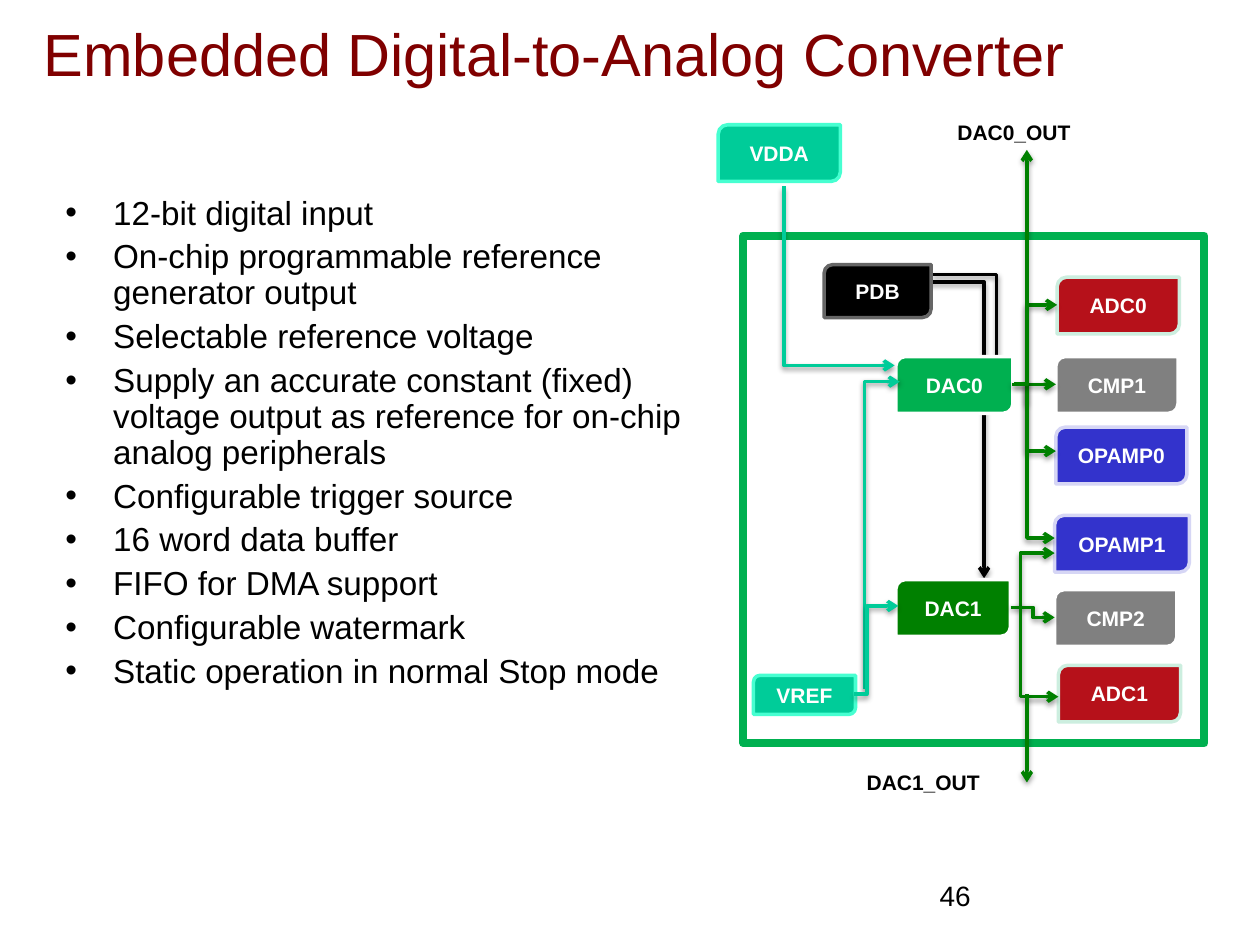
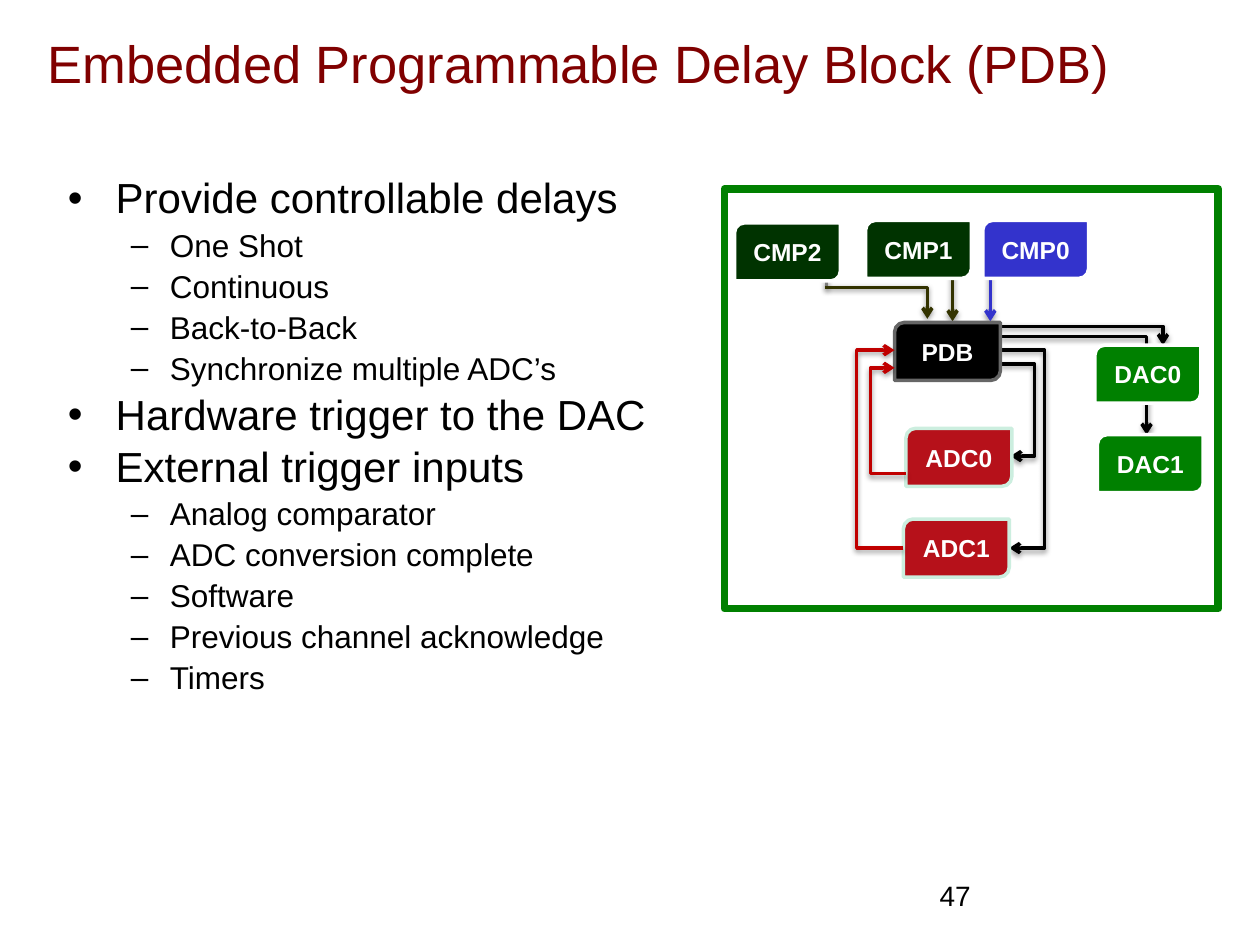
from lxml import etree
from pptx import Presentation
from pptx import util as u
from pptx.dml import color
from pptx.enum import shapes, text
from pptx.oxml import ns

FONT = "Arial"
BLACK, WHITE, MAROON = "000000", "FFFFFF", "800000"
GREEN, LIME, TEAL, BLUE = "008000", "00B050", "00CC99", "3333CC"
RED, CRIMSON, GREY, OLIVE = "C00000", "B6111A", "808080", "333300"
RIMS = {BLACK: "666666", TEAL: "47FFD1", BLUE: "D6D6F5", CRIMSON: "CCEEDF"}
LEVELS = [("•", 0.38, 0.38), ("–", 0.81, 0.31)]


def paint(part, tone):
    """Give a fill or a line one solid colour."""
    part.solid()
    part.fore_color.rgb = color.RGBColor.from_string(tone)


def node(parent, tag, **attrs):
    """Append a drawing element with its attributes."""
    return etree.SubElement(parent, ns.qn("a:" + tag), attrs)


def style(run, size, tone, bold=False):
    """Format one run."""
    for key, val in {"name": FONT, "size": u.Pt(size), "bold": bold}.items():
        setattr(run.font, key, val)
    run.font.color.rgb = color.RGBColor.from_string(tone)


def write(slide, box, words, size, tone=BLACK, bold=False, anchor="TOP"):
    """Place a one-line text box."""
    frame = slide.shapes.add_textbox(*map(u.Inches, box)).text_frame
    frame.word_wrap = True
    frame.vertical_anchor = getattr(text.MSO_ANCHOR, anchor)
    run = frame.paragraphs[0].add_run()
    run.text = words
    style(run, size, tone, bold)


def base(deck, title, box, size, number):
    """Add a slide with its title and page number."""
    slide = deck.slides.add_slide(deck.slide_layouts[6])
    write(slide, box, title, size, MAROON, anchor="MIDDLE")
    write(slide, (7.36, 6.92, 0.73, 0.37), str(number), 16)
    return slide


def bullets(slide, box, items, sizes, gap):
    """Fill a box with bulleted lines given as level and words."""
    frame = slide.shapes.add_textbox(*map(u.Inches, box)).text_frame
    frame.word_wrap = True
    for pos, (level, words) in enumerate(items):
        para = frame.add_paragraph() if pos else frame.paragraphs[0]
        mark, left, hang = LEVELS[level]
        props = para._p.get_or_add_pPr()
        props.set("marL", str(u.Inches(left)))
        props.set("indent", str(-u.Inches(hang)))
        node(props, "buFont", typeface=FONT)
        node(props, "buChar", char=mark)
        form = {"level": level, "line_spacing": 0.9,
                "space_before": u.Pt(gap if pos else 0)}
        for key, val in form.items():
            setattr(para, key, val)
        run = para.add_run()
        run.text = words
        style(run, sizes[level], BLACK)


def border(slide, spot, box, tone):
    """Draw the open chip outline."""
    x, y, w, h = box
    rect = slide.shapes.add_shape(
        shapes.MSO_SHAPE.RECTANGLE,
        *map(u.Inches, (spot[0] + x, spot[1] + y, w, h)))
    rect.shadow.inherit = False
    rect.fill.background()
    paint(rect.line.fill, tone)
    rect.line.width = u.Pt(4.5)


def block(slide, spot, name, box, tone, size, rim=None):
    """Draw one named module."""
    x, y, w, h = box
    shape = slide.shapes.add_shape(
        shapes.MSO_SHAPE.ROUND_2_DIAG_RECTANGLE,
        *map(u.Inches, (spot[0] + x, spot[1] + y, w, h)))
    shape.shadow.inherit = False
    paint(shape.fill, tone)
    paint(shape.line.fill, rim or RIMS.get(tone, WHITE))
    shape.line.width = u.Pt(2)
    frame = shape.text_frame
    frame.word_wrap = False
    frame.vertical_anchor = text.MSO_ANCHOR.MIDDLE
    para = frame.paragraphs[0]
    para.alignment = text.PP_ALIGN.CENTER
    run = para.add_run()
    run.text = name
    style(run, size, WHITE, True)


def finish(line, tone, head):
    """Give a wire its colour, arrowhead and soft shadow."""
    paint(line.line.fill, tone)
    line.line.width = u.Pt(2)
    props = line._element.spPr
    if head:
        node(props.find(ns.qn("a:ln")), "tailEnd", type="arrow")
    cast = node(node(props, "effectLst"), "outerShdw", blurRad=str(u.Pt(3.1)),
                dist=str(u.Pt(1.6)), dir="5400000", rotWithShape="0")
    node(node(cast, "srgbClr", val=BLACK), "alpha", val="38000")


def wire(slide, spot, tone, start, end, way="", bend=None, head=True):
    """Draw a straight wire, or one that leaves along x or y and may bend."""
    ends = [u.Inches(at + off) for at, off in zip(start + end, spot * 2)]
    kind = "ELBOW" if way else "STRAIGHT"
    line = slide.shapes.add_connector(
        getattr(shapes.MSO_CONNECTOR, kind), *ends)
    props = line._element.spPr
    if way:
        geom = props.find(ns.qn("a:prstGeom"))
        geom.set("prst", "bentConnector2" if bend is None else "bentConnector3")
        if bend is not None:
            axis = "xy".index(way)
            ratio = (bend - start[axis]) / (end[axis] - start[axis])
            guides = geom.find(ns.qn("a:avLst"))
            if guides is None:
                guides = node(geom, "avLst")
            node(guides, "gd", name="adj1", fmla=f"val {round(ratio * 100000)}")
    if way == "y":
        wide, tall = line.width, line.height
        line.left += (wide - tall) // 2
        line.top += (tall - wide) // 2
        line.width, line.height = tall, wide
        down = end[1] > start[1]
        form = props.find(ns.qn("a:xfrm"))
        marks = {"rot": "16200000" if down else "5400000",
                 "flipH": "1", "flipV": "0" if down else "1"}
        for key, val in marks.items():
            form.set(key, val)
    finish(line, tone, head)


def analog(slide, spot):
    """Draw the converter diagram from its top left corner."""
    border(slide, spot, (0.9, 1.87, 3.66, 4.03), LIME)
    wire(slide, spot, BLACK, (2.32, 2.22), (2.81, 4.59), "y", 2.24)
    wire(slide, spot, BLACK, (2.4, 2.18), (2.91, 2.94), "y", 2.18)
    for name, box, tone in [
            ("PDB", (1.54, 2.1, 0.85, 0.42), BLACK),
            ("DAC0", (2.11, 2.83, 0.93, 0.45), LIME),
            ("DAC1", (2.11, 4.6, 0.91, 0.45), GREEN),
            ("ADC0", (3.39, 2.2, 0.97, 0.45), CRIMSON),
            ("CMP1", (3.38, 2.83, 0.97, 0.45), GREY),
            ("OPAMP0", (3.38, 3.39, 1.04, 0.45), BLUE),
            ("OPAMP1", (3.37, 4.09, 1.07, 0.45), BLUE),
            ("CMP2", (3.37, 4.68, 0.97, 0.45), GREY),
            ("ADC1", (3.4, 5.28, 0.97, 0.45), CRIMSON),
            ("VREF", (0.98, 5.36, 0.81, 0.31), TEAL),
            ("VDDA", (0.7, 0.99, 0.97, 0.45), TEAL)]:
        block(slide, spot, name, box, tone, 12)
    for tone, *route in [
            (GREEN, (3.15, 3.03), (3.38, 3.58), "y"),
            (GREEN, (3.03, 3.05), (3.38, 3.05)),
            (GREEN, (3.15, 3.2), (3.39, 2.42), "y", 2.42),
            (GREEN, (3.15, 3.08), (3.37, 4.27), "y", 4.27),
            (GREEN, (3.1, 4.82), (3.37, 4.39), "y", 4.39),
            (GREEN, (3.02, 4.82), (3.37, 4.9), "x", 3.2),
            (GREEN, (3.1, 4.82), (3.4, 5.53), "y", 5.53),
            (TEAL, (1.86, 5.47), (2.14, 3.03), "y"),
            (TEAL, (1.78, 5.51), (2.13, 4.81), "x", 1.88),
            (TEAL, (1.22, 1.48), (2.1, 2.9), "y", 2.9),
            (GREEN, (3.05, 3.05), (3.15, 1.19), "x"),
            (GREEN, (3.15, 5.51), (3.15, 6.21))]:
        wire(slide, spot, tone, *route)
    for words, x, y in [("DAC0_OUT", 2.5, 0.9), ("DAC1_OUT", 1.78, 6.06)]:
        write(slide, (spot[0] + x, spot[1] + y, 1.29, 0.3), words, 12,
              bold=True)


def delay(slide, spot):
    """Draw the delay block diagram from its top left corner."""
    border(slide, spot, (0.75, 1.5, 3.92, 3.33), GREEN)
    wire(slide, spot, GREY, (1.56, 2.29), (1.56, 2.2), head=False)
    for tone, *route in [
            (BLUE, (2.86, 2.07), (2.86, 2.55)),
            (OLIVE, (2.56, 2.07), (2.56, 2.55)),
            (BLACK, (2.91, 2.59), (4.23, 2.74), "x", 4.23),
            (BLACK, (2.94, 2.67), (4.1, 3.45), "x"),
            (OLIVE, (1.55, 2.28), (2.36, 2.53), "x", 2.36),
            (BLACK, (2.94, 2.78), (3.01, 4.35), "x", 3.29),
            (BLACK, (2.94, 2.89), (3.02, 3.62), "x", 3.21)]:
        wire(slide, spot, tone, *route)
    for name, x, y, tone in [
            ("CMP2", 0.83, 1.77, "003300"), ("CMP1", 1.87, 1.75, "003300"),
            ("CMP0", 2.8, 1.75, BLUE), ("PDB", 2.1, 2.56, BLACK),
            ("ADC0", 2.19, 3.4, CRIMSON), ("ADC1", 2.17, 4.12, CRIMSON),
            ("DAC0", 3.69, 2.74, GREEN), ("DAC1", 3.71, 3.45, GREEN)]:
        rim = WHITE if name == "CMP0" else None
        block(slide, spot, name, (x, y, 0.84, 0.46), tone, 14, rim)
    wire(slide, spot, RED, (2.19, 3.76), (2.1, 2.92), "x", 1.91)
    wire(slide, spot, RED, (2.17, 4.35), (2.1, 2.78), "x", 1.8)


def main():
    """Build both slides and save them."""
    deck = Presentation()
    deck.slide_width, deck.slide_height = u.Inches(10), u.Inches(7.5)
    spot = (5, 0)

    slide = base(deck, "Embedded Digital-to-Analog Converter",
                 (0.25, 0, 9.75, 0.83), 34, 46)
    traits = [
        "12-bit digital input",
        "On-chip programmable reference generator output",
        "Selectable reference voltage",
        "Supply an accurate constant (fixed) voltage output as reference "
        "for on-chip analog peripherals",
        "Configurable trigger source",
        "16 word data buffer",
        "FIFO for DMA support",
        "Configurable watermark",
        "Static operation in normal Stop mode"]
    bullets(slide, (0.42, 1.51, 5.18, 4.42), [(0, item) for item in traits],
            (19, 19), 4.5)
    analog(slide, spot)

    slide = base(deck, "Embedded Programmable Delay Block (PDB)",
                 (0.28, 0.25, 9.72, 0.5), 30, 47)
    topics = {
        "Provide controllable delays": [
            "One Shot", "Continuous", "Back-to-Back",
            "Synchronize multiple ADC’s"],
        "Hardware trigger to the DAC": [],
        "External trigger inputs": [
            "Analog comparator", "ADC conversion complete", "Software",
            "Previous channel acknowledge", "Timers"]}
    items = []
    for topic, points in topics.items():
        items += [(0, topic)] + [(1, point) for point in points]
    bullets(slide, (0.44, 1.36, 5.02, 4.52), items, (24, 18), 4)
    delay(slide, spot)

    deck.save("out.pptx")


if __name__ == "__main__":
    main()
